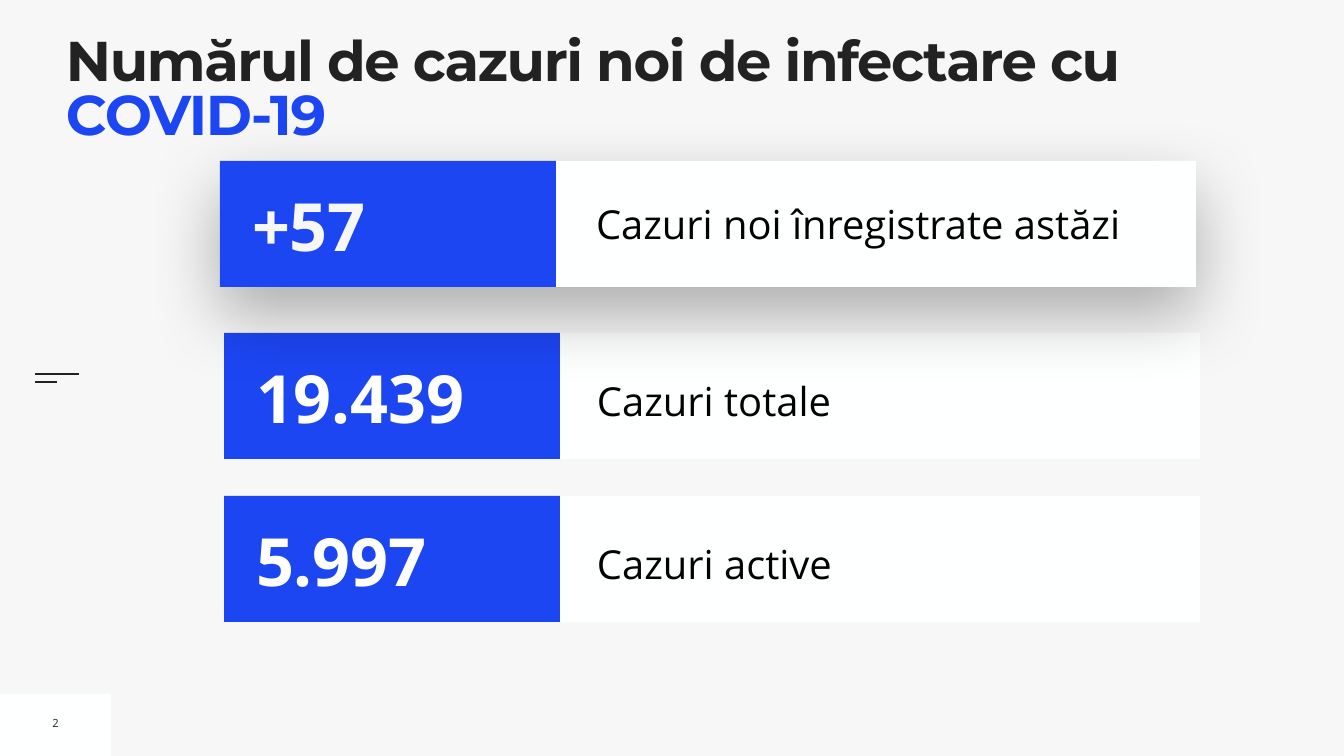
from dataclasses import dataclass

from lxml.etree import SubElement
from pptx import Presentation
from pptx.dml.color import RGBColor
from pptx.enum.shapes import MSO_CONNECTOR, MSO_SHAPE
from pptx.enum.text import MSO_ANCHOR, MSO_AUTO_SIZE, PP_ALIGN
from pptx.oxml.ns import qn
from pptx.util import Pt


# Theme
@dataclass(frozen=True)
class Theme:
    background: str = "F7F7F7"
    panel: str = "FEFFFF"
    accent: str = "1D46F3"
    ink: str = "222222"
    label: str = "000000"
    number: str = "FFFFFF"
    heading_font: str = "Montserrat"
    body_font: str = "Open Sans"
    title_size: int = 80
    number_size: int = 95
    label_size: int = 57
    page_size: int = 16


THEME = Theme()

# Content
TITLE = [("Numărul de cazuri noi de infectare cu ", THEME.ink),
         ("COVID-19", THEME.accent)]
PAGE_NUMBER = "2"
PLAIN_LABEL = {"box": (373, 29, 584, 63), "inset": 0,
               "spacing": {"line_spacing": 1.3, "space_before": Pt(20)}}
RAISED_LABEL = {"box": (371, 34, 593, 58), "inset": 5, "spacing": {}}
TOTAL = {"number": "19.439", "text": "Cazuri totale", "at": (224, 333),
         "color": THEME.number, "label": PLAIN_LABEL, "raised": False}
ACTIVE = {"number": "5.997", "text": "Cazuri active", "at": (224, 496),
          "color": THEME.number, "label": PLAIN_LABEL, "raised": False}
NEW = {"number": "+57", "text": "Cazuri noi înregistrate astăzi",
       "at": (220, 161), "color": THEME.background, "label": RAISED_LABEL,
       "raised": True}

# Layout in px
SLIDE = (1344, 756)
BAR_WIDTH, NUMBER_WIDTH, BAR_HEIGHT = 976, 336, 126
NUMBER_BOX = (27, 18, 304, 91)
MENU_LINES = [(35, 374, 79), (35, 382, 57)]


def px(value):
    return round(value * 914400 / 50.4)


def add_panel(slide, box, color, raised=False):
    panel = slide.shapes.add_shape(MSO_SHAPE.RECTANGLE, *map(px, box))
    panel.fill.solid()
    panel.fill.fore_color.rgb = RGBColor.from_string(color)
    panel.line.fill.background()
    panel.shadow.inherit = False
    if raised:
        effects = panel._element.spPr.find(qn("a:effectLst"))
        shadow = SubElement(effects, qn("a:outerShdw"), blurRad=str(Pt(100)),
                            dist=str(Pt(40)), dir="5400000", rotWithShape="0")
        black = SubElement(shadow, qn("a:srgbClr"), val="000000")
        SubElement(black, qn("a:alpha"), val="30000")


def add_text(slide, box, runs, size, font=THEME.body_font, bold=False,
             inset=5, tracking=None, paragraph_format=None, **frame_format):
    frame = slide.shapes.add_textbox(*map(px, box)).text_frame
    frame_values = {"word_wrap": True, "vertical_anchor": MSO_ANCHOR.MIDDLE,
                    "auto_size": MSO_AUTO_SIZE.SHAPE_TO_FIT_TEXT}
    for side in ("left", "top", "right", "bottom"):
        frame_values[f"margin_{side}"] = px(inset)
    for name, value in (frame_values | frame_format).items():
        setattr(frame, name, value)
    paragraph = frame.paragraphs[0]
    for name, value in (paragraph_format or {}).items():
        setattr(paragraph, name, value)
    for text, color in runs:
        run = paragraph.add_run()
        run.text = text
        for name, value in {"name": font, "size": Pt(size), "bold": bold}.items():
            setattr(run.font, name, value)
        run.font.color.rgb = RGBColor.from_string(color)
        if tracking is not None:
            run._r.get_or_add_rPr().set("spc", str(tracking * 100))


def add_menu_line(slide, left, top, right):
    line = slide.shapes.add_connector(MSO_CONNECTOR.STRAIGHT,
                                      *map(px, (left, top, right, top)))
    line.line.color.rgb = RGBColor.from_string(THEME.ink)
    line.line.width = Pt(3)
    SubElement(line._element.spPr, qn("a:effectLst"))


def add_bar(slide, bar):
    left, top = bar["at"]

    def inside(box):
        return (left + box[0], top + box[1], *box[2:])

    label = bar["label"]
    add_panel(slide, (left, top, BAR_WIDTH, BAR_HEIGHT), THEME.panel, bar["raised"])
    add_text(slide, inside(label["box"]), [(bar["text"], THEME.label)],
             THEME.label_size, inset=label["inset"],
             paragraph_format=label["spacing"])
    add_panel(slide, (left, top, NUMBER_WIDTH, BAR_HEIGHT), THEME.accent)
    add_text(slide, inside(NUMBER_BOX), [(bar["number"], bar["color"])],
             THEME.number_size, bold=True)


def main():
    deck = Presentation()
    deck.slide_width, deck.slide_height = map(px, SLIDE)
    slide = deck.slides.add_slide(deck.slide_layouts[6])
    slide.background.fill.solid()
    slide.background.fill.fore_color.rgb = RGBColor.from_string(THEME.background)

    # Page corner and menu mark
    add_panel(slide, (0, 694, 111, 62), THEME.panel)
    for menu_line in MENU_LINES:
        add_menu_line(slide, *menu_line)
    add_text(slide, (47, 710, 17, 26), [(PAGE_NUMBER, THEME.ink)],
             THEME.page_size, word_wrap=False,
             paragraph_format={"alignment": PP_ALIGN.CENTER})

    # Title
    add_text(slide, (66, 39, 1207, 80), TITLE, THEME.title_size,
             THEME.heading_font, bold=True, inset=0, tracking=-2,
             paragraph_format={"line_spacing": 0.8},
             vertical_anchor=MSO_ANCHOR.TOP, auto_size=MSO_AUTO_SIZE.NONE)

    # Case bars, the raised one last so its shadow falls on the others
    for bar in (TOTAL, ACTIVE, NEW):
        add_bar(slide, bar)

    deck.save("out.pptx")


if __name__ == "__main__":
    main()
